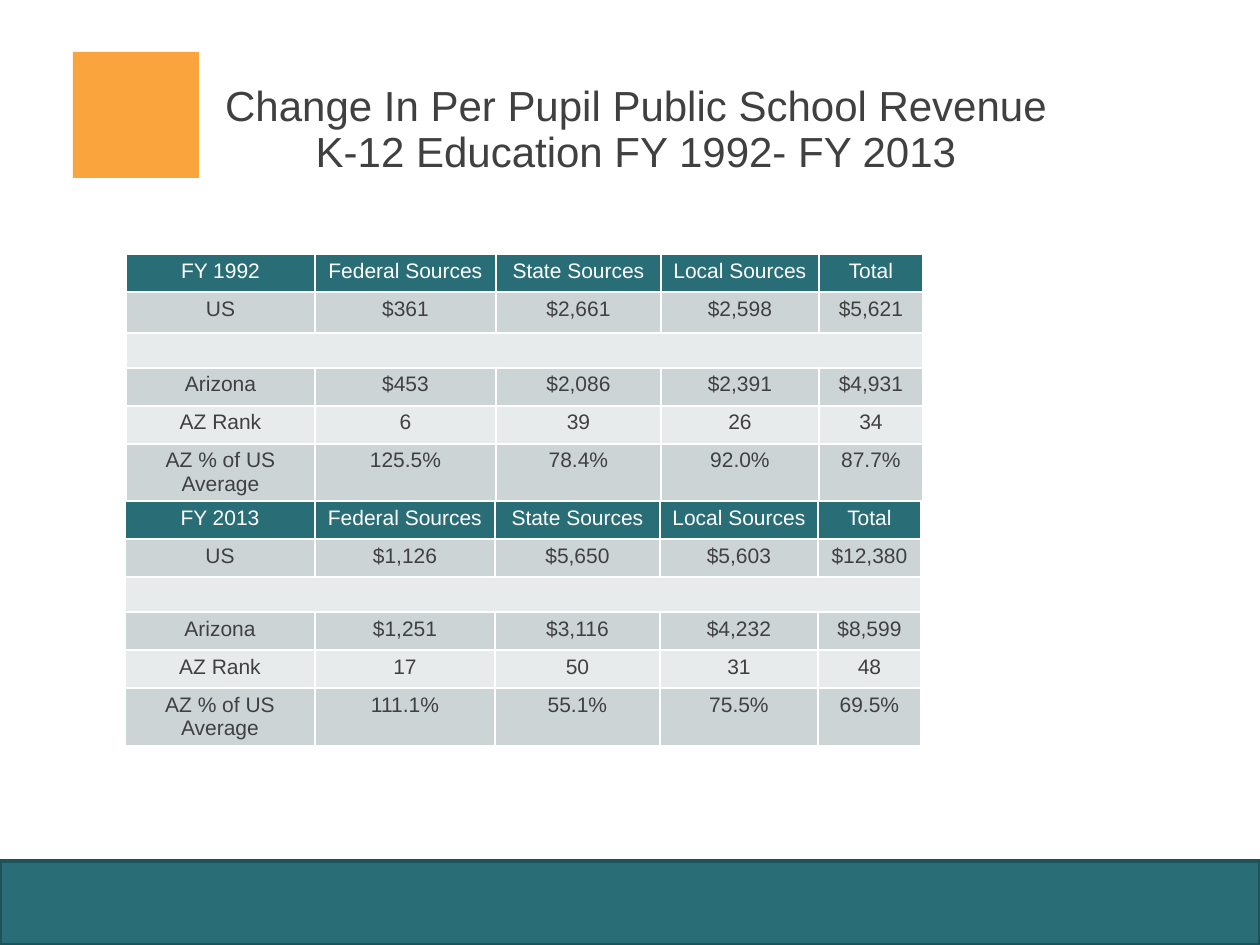
from lxml.etree import SubElement
from pptx import Presentation
from pptx.dml.color import RGBColor
from pptx.enum.shapes import MSO_SHAPE
from pptx.enum.text import MSO_ANCHOR, MSO_AUTO_SIZE, PP_ALIGN
from pptx.oxml.ns import qn
from pptx.util import Emu, Pt

TEAL, ORANGE, DARK, WHITE = "296D77", "FAA43E", "404040", "FFFFFF"
BAND_DARK, BAND_LIGHT = "CDD4D6", "E8EBEC"
SOURCES = ["Federal Sources", "State Sources", "Local Sources", "Total"]

REVENUE_1992 = [
    ["FY 1992", *SOURCES],
    ["US", "$361", "$2,661", "$2,598", "$5,621"],
    [],
    ["Arizona", "$453", "$2,086", "$2,391", "$4,931"],
    ["AZ Rank", "6", "39", "26", "34"],
    ["AZ % of US Average", "125.5%", "78.4%", "92.0%", "87.7%"],
]
REVENUE_2013 = [
    ["FY 2013", *SOURCES],
    ["US", "$1,126", "$5,650", "$5,603", "$12,380"],
    [],
    ["Arizona", "$1,251", "$3,116", "$4,232", "$8,599"],
    ["AZ Rank", "17", "50", "31", "48"],
    ["AZ % of US Average", "111.1%", "55.1%", "75.5%", "69.5%"],
]


def px(n):
    return Emu(round(n * 914400 / 126))


def rgb(code):
    return RGBColor.from_string(code)


def style_paragraph(p, size, color):
    p.alignment = PP_ALIGN.CENTER
    p.font.name = "Arial"
    p.font.size = Pt(size)
    p.font.bold = False
    p.font.color.rgb = rgb(color)


def set_margins(box):
    box.margin_left = box.margin_right = px(9)
    box.margin_top = box.margin_bottom = px(5)


def add_rect(s, x, y, w, h, fill, line=None):
    sp = s.shapes.add_shape(MSO_SHAPE.RECTANGLE, px(x), px(y), px(w), px(h))
    sp.shadow.inherit = False
    sp.fill.solid()
    sp.fill.fore_color.rgb = rgb(fill)
    if line:
        sp.line.color.rgb = rgb(line)
        sp.line.width = Pt(2)
    else:
        sp.line.fill.background()


def set_title(s, text, x, y, w, h):
    sp = s.shapes.title
    sp.left, sp.top, sp.width, sp.height = px(x), px(y), px(w), px(h)
    tf = sp.text_frame
    tf.auto_size = MSO_AUTO_SIZE.NONE
    tf.vertical_anchor = MSO_ANCHOR.MIDDLE
    set_margins(tf)
    p = tf.paragraphs[0]
    p.text = text
    p.line_spacing = 0.9
    style_paragraph(p, 24, DARK)


def fill_cell(cell, text, fill, color):
    cell.fill.solid()
    cell.fill.fore_color.rgb = rgb(fill)
    set_margins(cell)
    p = cell.text_frame.paragraphs[0]
    p.text = text
    style_paragraph(p, 12, color)
    if not text:  # keeps an empty row from growing
        SubElement(p._p, qn("a:endParaRPr"), sz="1200")


def add_revenue_table(s, rows, x, y, widths, heights):
    frame = s.shapes.add_table(len(rows), len(widths), px(x), px(y),
                               px(sum(widths)), px(sum(heights)))
    table = frame.table
    for column, width in zip(table.columns, widths):
        column.width = px(width)
    for i, (values, height) in enumerate(zip(rows, heights)):
        table.rows[i].height = px(height)
        band = BAND_DARK if i % 2 else BAND_LIGHT
        fill, color = (band, DARK) if i else (TEAL, WHITE)
        if not values:
            table.cell(i, 0).merge(table.cell(i, len(widths) - 1))
        for j, text in enumerate(values or [""] * len(widths)):
            fill_cell(table.cell(i, j), text, fill, color)


def main():
    prs = Presentation()
    prs.slide_width, prs.slide_height = px(1260), px(945)
    s = prs.slides.add_slide(prs.slide_layouts[5])

    # Footer band and corner square
    add_rect(s, 0, 861, 1260, 84, TEAL, line="1E5158")
    add_rect(s, 73, 52, 126, 126, ORANGE)

    # Title
    set_title(s, "Change In Per Pupil Public School Revenue\v"
                 "K-12 Education FY 1992- FY 2013", 79, 63, 1114, 136)

    # Revenue tables
    add_revenue_table(s, REVENUE_1992, 126, 254,
                      [189, 181, 165, 158, 104], [38, 41, 35, 38, 38, 58])
    add_revenue_table(s, REVENUE_2013, 125, 501,
                      [190, 180, 165, 158, 103], [38, 38, 35, 38, 38, 58])

    prs.save("out.pptx")


if __name__ == "__main__":
    main()
